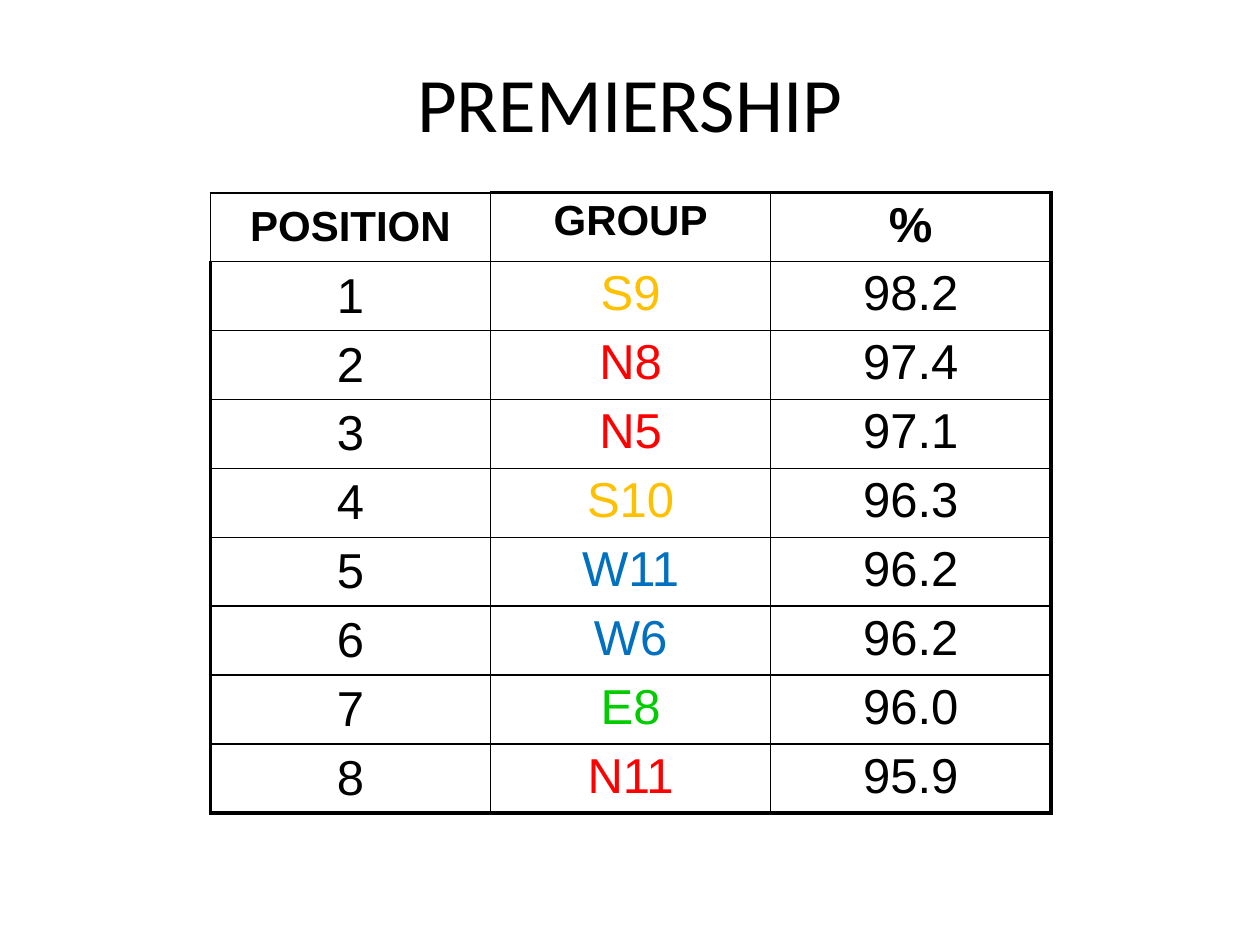
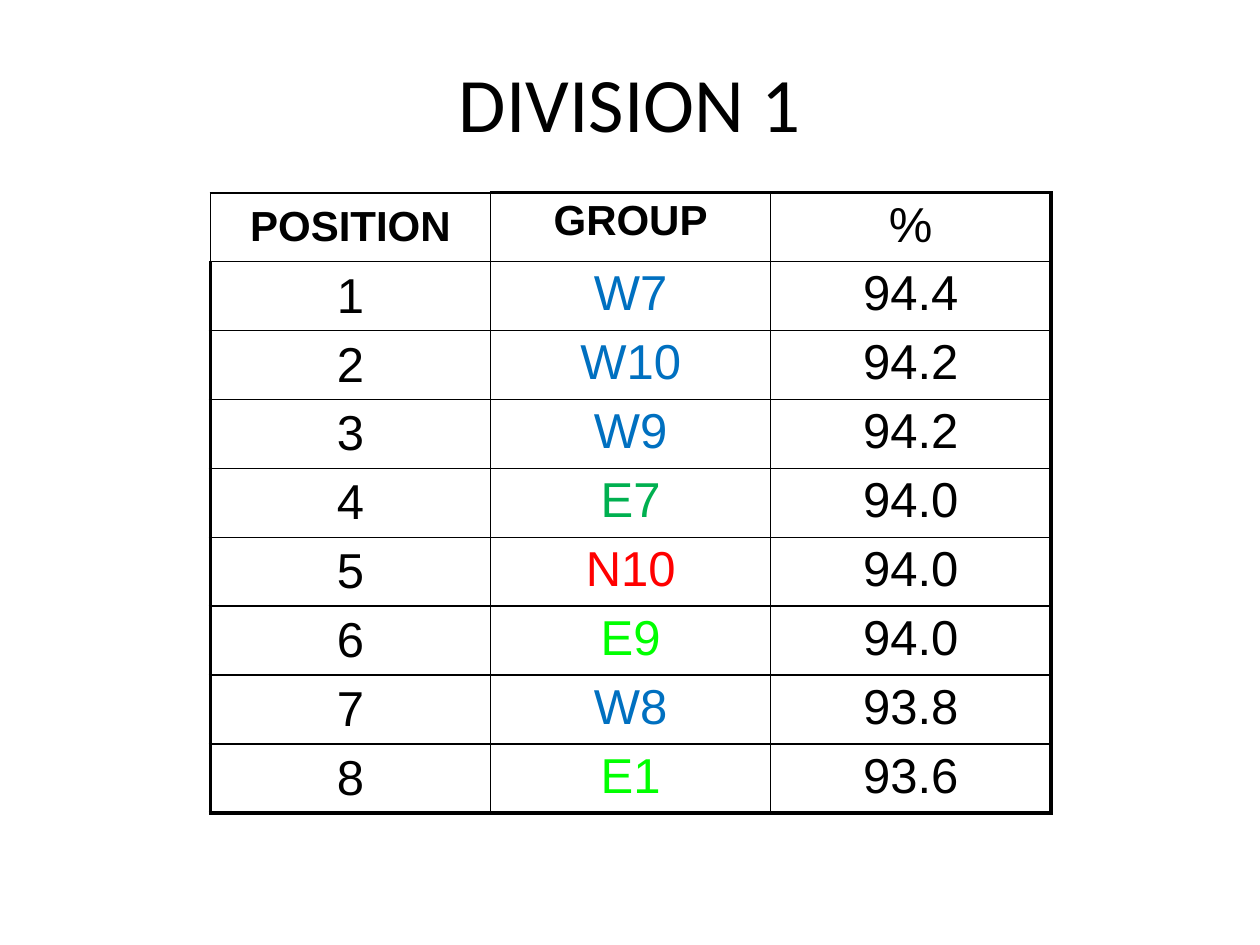
from dataclasses import dataclass

from lxml.etree import SubElement
from pptx import Presentation
from pptx.dml.color import RGBColor
from pptx.enum.text import MSO_ANCHOR as Anchor, PP_ALIGN as Align
from pptx.oxml.ns import qn
from pptx.util import Inches, Pt


@dataclass(frozen=True)
class Theme:
    ink: str = "000000"
    gold: str = "FFC000"
    red: str = "FF0000"
    blue: str = "0070C0"
    leaf: str = "00CC00"
    emerald: str = "00B050"
    lime: str = "00FF00"
    title_font: str = "Calibri"
    table_font: str = "Arial"
    title_size: int = 44
    heading_size: int = 24
    body_size: int = 28
    inner_line: float = 1
    outer_line: float = 2.25


THEME = Theme()
REGION_COLORS = {"N": THEME.red, "S": THEME.gold, "W": THEME.blue, "E": THEME.lime}
GROUP_COLORS = {"E8": THEME.leaf, "E7": THEME.emerald}
HEADINGS = ("POSITION", "GROUP", "%")
TABLE_WIDTH, TABLE_HEIGHT = 6.67, 4.82

# Title, whether the "%" heading is bold, and groups with scores in rank order
DIVISIONS = [
    ("PREMIERSHIP", True, [
        ("S9", "98.2"), ("N8", "97.4"), ("N5", "97.1"), ("S10", "96.3"),
        ("W11", "96.2"), ("W6", "96.2"), ("E8", "96.0"), ("N11", "95.9"),
    ]),
    ("DIVISION 1", False, [
        ("W7", "94.4"), ("W10", "94.2"), ("W9", "94.2"), ("E7", "94.0"),
        ("N10", "94.0"), ("E9", "94.0"), ("W8", "93.8"), ("E1", "93.6"),
    ]),
]


def write_centered(frame, text, font_name, size, color=THEME.ink, bold=False):
    paragraph = frame.paragraphs[0]
    paragraph.text = text
    paragraph.alignment = Align.CENTER
    font = paragraph.font
    font.name, font.size, font.bold = font_name, Pt(size), bold
    font.color.rgb = RGBColor.from_string(color)


def add_title(slide, text):
    title = slide.shapes.add_textbox(Inches(0.75), 0, Inches(8.5), Inches(1.61))
    title.text_frame.word_wrap = True
    title.text_frame.vertical_anchor = Anchor.MIDDLE
    write_centered(title.text_frame, text, THEME.title_font, THEME.title_size)


def set_borders(cell, heavy_sides):
    """Rule all four sides, using the outer weight on heavy_sides."""
    properties = cell._tc.get_or_add_tcPr()
    for side in "LRTB":
        weight = THEME.outer_line if side in heavy_sides else THEME.inner_line
        line = SubElement(properties, qn(f"a:ln{side}"), w=str(Pt(weight)))
        fill = SubElement(line, qn("a:solidFill"))
        SubElement(fill, qn("a:srgbClr"), val=THEME.ink)


def heavy_sides(row, column, last_row, last_column):
    """The outer frame is heavy except around the top left heading."""
    sides = ""
    if column == 0 and row > 0:
        sides += "L"
    if column == last_column:
        sides += "R"
    if row == 0 and column > 0:
        sides += "T"
    if row == last_row:
        sides += "B"
    return sides


def group_color(group):
    return GROUP_COLORS.get(group, REGION_COLORS[group[0]])


def write_cell(cell, text, row, column, bold_percent):
    size, color, bold = THEME.body_size, THEME.ink, False
    if row == 0:
        bold = text != "%" or bold_percent
        if text != "%":
            size = THEME.heading_size
    elif column == 1:
        color = group_color(text)
    write_centered(cell.text_frame, text, THEME.table_font, size, color, bold)
    cell.vertical_anchor = Anchor.MIDDLE if column == 0 else Anchor.TOP
    cell.margin_top = cell.margin_bottom = Inches(0.04)


def add_standings(slide, results, bold_percent):
    rows = [HEADINGS]
    rows += [(str(rank), *result) for rank, result in enumerate(results, 1)]
    table = slide.shapes.add_table(
        len(rows), len(HEADINGS), Inches(1.67), Inches(1.53),
        Inches(TABLE_WIDTH), Inches(TABLE_HEIGHT)).table
    table.first_row = table.horz_banding = False
    for row, texts in enumerate(rows):
        for column, text in enumerate(texts):
            cell = table.cell(row, column)
            write_cell(cell, text, row, column, bold_percent)
            set_borders(cell, heavy_sides(row, column, len(rows) - 1, len(HEADINGS) - 1))
            cell.fill.background()


def main():
    presentation = Presentation()
    presentation.slide_width, presentation.slide_height = Inches(10), Inches(7.5)
    blank = presentation.slide_layouts[6]
    for title, bold_percent, results in DIVISIONS:
        slide = presentation.slides.add_slide(blank)
        add_title(slide, title)
        add_standings(slide, results, bold_percent)
    presentation.save("out.pptx")


if __name__ == "__main__":
    main()
